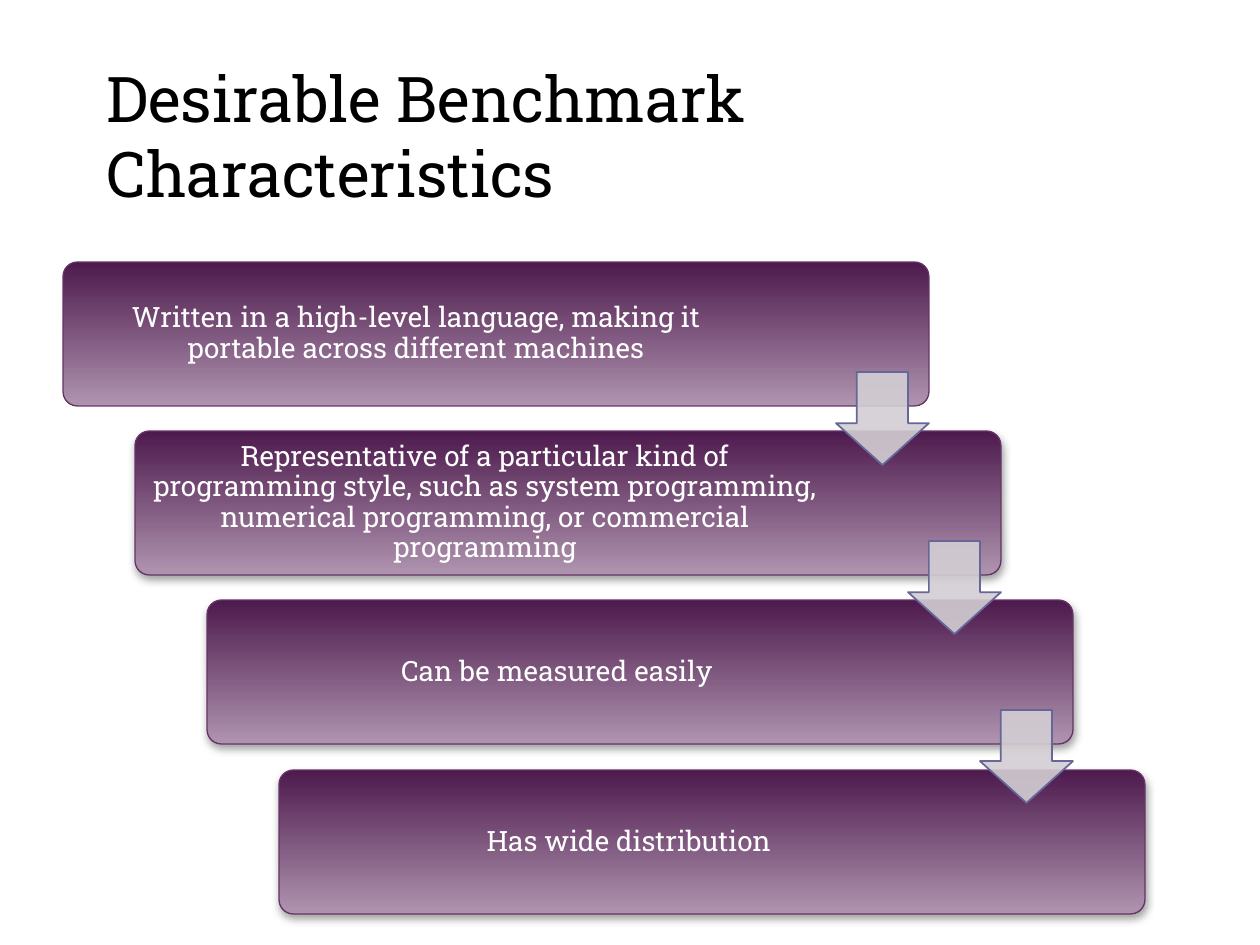
from pptx import Presentation
from pptx.dml.color import RGBColor as RGB
from pptx.enum.shapes import MSO_SHAPE as Kind
from pptx.enum.text import MSO_ANCHOR as Anchor, PP_ALIGN as Align
from pptx.oxml import parse_xml
from pptx.util import Pt

# Content
TITLE = "Desirable Benchmark Characteristics"
STEPS = [
    "Written in a high-level language, making it portable across different machines",
    "Representative of a particular kind of programming style, such as system "
    "programming, numerical programming, or commercial programming",
    "Can be measured easily",
    "Has wide distribution",
]

# Layout in px, 126 to the inch
PX = 914400 // 126
LEFT, TOP = 63, 262
WIDE, HIGH = 866, 144
DX, RUN = 72, 508          # shift per step, and fall from first to last
ARROW, DROP = 93, 110      # arrow size, and its offset below a bar's top
PAD = 4

# Formats
FONT = "Roboto Slab"
HEAD = {"vertical_anchor": Anchor.TOP, "word_wrap": True}
BODY = {"vertical_anchor": Anchor.MIDDLE, "word_wrap": True,
        "margin_left": 9 * PX, "margin_right": 9 * PX,
        "margin_top": 9 * PX, "margin_bottom": 9 * PX}
LEAD = {"alignment": Align.LEFT}
MID = {"alignment": Align.CENTER, "line_spacing": 0.9}
NS = 'xmlns:a="http://schemas.openxmlformats.org/drawingml/2006/main"'
SHADOW = (f'<a:effectLst {NS}><a:outerShdw blurRad="{Pt(5)}" dist="{Pt(2)}" '
          'dir="5400000" rotWithShape="0"><a:srgbClr val="808080">'
          '<a:alpha val="75000"/></a:srgbClr></a:outerShdw></a:effectLst>')


def tint(code):
    return RGB.from_string(code)


def style(part, form):
    for key, val in form.items():
        setattr(part, key, val)


def scale(*box):
    return [n * PX for n in box]


def write(box, text, size, color, frame, para):
    body = shapes.add_textbox(*scale(*box)).text_frame
    style(body, frame)
    line = body.paragraphs[0]
    style(line, para)
    run = line.add_run()
    run.text = text
    style(run.font, {"name": FONT, "size": Pt(size)})
    run.font.color.rgb = tint(color)


def draw(kind, box, adjust, edge, width):
    item = shapes.add_shape(kind, *scale(*box))
    item.shadow.inherit = False
    for i, val in enumerate(adjust):
        item.adjustments[i] = val
    item.line.color.rgb = tint(edge)
    item.line.width = Pt(width)
    return item


def add_bar(x, y, shade):
    bar = draw(Kind.ROUNDED_RECTANGLE, (x, y, WIDE, HIGH), [0.1], "663366", 0.75)
    bar.fill.gradient()
    bar.fill.gradient_angle = 270
    for stop, color, pos in zip(bar.fill.gradient_stops, ("4D1A4D", "AF94AF"), (0, 1)):
        stop.color.rgb = tint(color)
        stop.position = pos
    if shade:
        props = bar._element.spPr
        old = props.find("{*}effectLst")
        props.replace(old, parse_xml(SHADOW))


def add_arrow(x, y):
    box = (x + WIDE - ARROW, y + DROP, ARROW, ARROW)
    arrow = draw(Kind.DOWN_ARROW, box, [0.55, 0.45], "666699", 1)
    # The shape's adjustments run head length first, then shaft width
    arrow.adjustments[0], arrow.adjustments[1] = 0.55, 0.45
    arrow.fill.solid()
    arrow.fill.fore_color.rgb = tint("D3CED3")
    color = arrow._element.spPr.find("{*}solidFill")[0]
    color.append(parse_xml(f'<a:alpha {NS} val="90000"/>'))


deck = Presentation()
deck.slide_width, deck.slide_height = scale(1260, 945)
shapes = deck.slides.add_slide(deck.slide_layouts[6]).shapes

# Title
write((94, 53, 1041, 154), TITLE, 36, "000000", HEAD, LEAD)

# Staircase of bars with their text
spots = [(LEFT + DX * i, TOP + RUN * i // (len(STEPS) - 1)) for i in range(len(STEPS))]
for i, ((x, y), text) in enumerate(zip(spots, STEPS)):
    add_bar(x, y, shade=i > 0)
    wide = 692 if i else 698
    write((x + PAD, y + PAD, wide, HIGH - 2 * PAD), text, 16, "FFFFFF", BODY, MID)

# Arrows from each bar to the next
for x, y in spots[:-1]:
    add_arrow(x, y)

deck.save("out.pptx")
